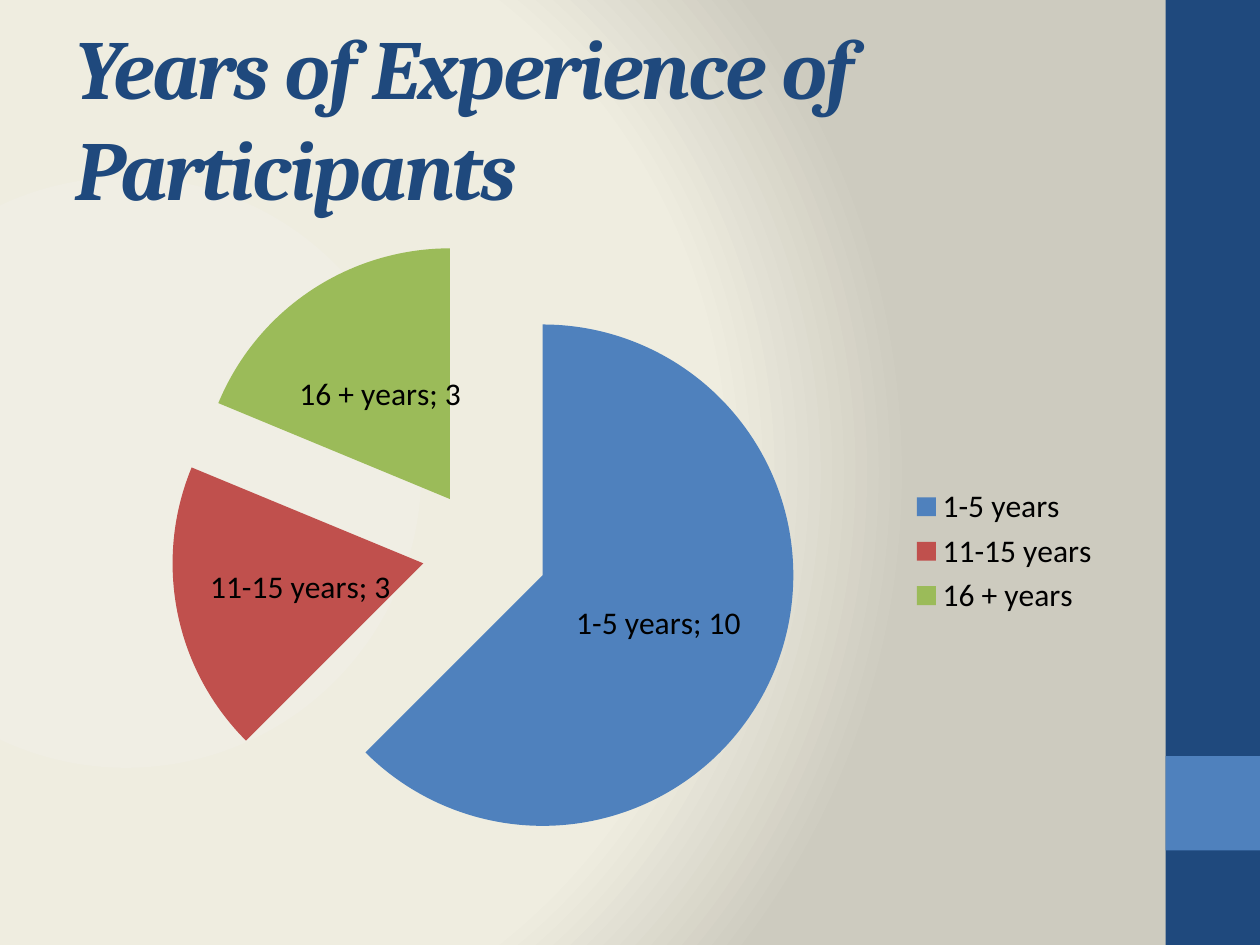
from dataclasses import dataclass

from pptx import Presentation, util as u
from pptx.chart.data import CategoryChartData
from pptx.dml.color import RGBColor
from pptx.enum import chart as ch, shapes, text
from pptx.oxml import parse_xml
from pptx.oxml.ns import nsdecls, qn

NAVY, BLUE = "1F497D", "4F81BD"


@dataclass
class Band:
    top: float
    height: float
    color: str


@dataclass
class Slice:
    label: str
    count: int
    color: str


BANDS = [Band(0, 7.5, NAVY), Band(6, 0.75, BLUE)]
SLICES = [
    Slice("1-5 years", 10, BLUE),
    Slice("11-15 years", 3, "C0504D"),
    Slice("16 + years", 3, "9BBB59"),
]
STOPS = [(0, "F0EEE4"), (75, "EFEDE0"), (100, "CDCBBF")]


def rgb(value: str) -> RGBColor:
    return RGBColor.from_string(value)


def set_background(s) -> None:
    s.background.fill.solid()
    stops = "".join(
        f'<a:gs pos="{pos * 1000}"><a:srgbClr val="{color}"/></a:gs>'
        for pos, color in STOPS
    )
    grad = parse_xml(
        f'<a:gradFill {nsdecls("a")} rotWithShape="1"><a:gsLst>{stops}</a:gsLst>'
        '<a:path path="circle">'
        '<a:fillToRect l="20000" t="50000" r="100000" b="50000"/>'
        "</a:path></a:gradFill>"
    )
    solid = next(s.element.iter(qn("a:solidFill")))
    solid.getparent().replace(solid, grad)


def add_band(s, band: Band) -> None:
    sp = s.shapes.add_shape(
        shapes.MSO_SHAPE.RECTANGLE,
        u.Inches(9.25), u.Inches(band.top), u.Inches(0.75), u.Inches(band.height),
    )
    sp.shadow.inherit = False
    sp.fill.solid()
    sp.fill.fore_color.rgb = rgb(band.color)
    sp.line.fill.background()


def add_text(s, content: str, *, left: float, top: float, width: float,
             height: float, size: float, font: str, color: str,
             bold: bool = False, italic: bool = False, spacing: float = 0) -> None:
    sp = s.shapes.add_textbox(
        u.Inches(left), u.Inches(top), u.Inches(width), u.Inches(height)
    )
    tf = sp.text_frame
    tf.word_wrap = True
    tf.vertical_anchor = text.MSO_ANCHOR.MIDDLE
    r = tf.paragraphs[0].add_run()
    r.text = content
    r.font.size, r.font.name = u.Pt(size), font
    r.font.bold, r.font.italic = bold, italic
    r.font.color.rgb = rgb(color)
    r.font._element.set("spc", str(round(spacing * 100)))


def add_pie(s, slices: list[Slice]) -> None:
    data = CategoryChartData()
    data.categories = [item.label for item in slices]
    data.add_series("Series 1", [item.count for item in slices])
    chart = s.shapes.add_chart(
        ch.XL_CHART_TYPE.PIE,
        u.Inches(0.5), u.Inches(1.75), u.Inches(8.33), u.Inches(5.25), data,
    ).chart
    chart.has_title = False
    chart.font.size, chart.font.name = u.Pt(18), "Calibri"
    chart.font.color.rgb = rgb("000000")
    chart.has_legend = True
    chart.legend.position = ch.XL_LEGEND_POSITION.RIGHT
    chart.legend.include_in_layout = False

    plot = chart.plots[0]
    plot.vary_by_categories = True
    series = plot.series[0]
    for i, item in enumerate(slices):
        fill = series.points[i].format.fill
        fill.solid()
        fill.fore_color.rgb = rgb(item.color)
    first_point = series._element.find(qn("c:dPt"))
    first_point.addprevious(parse_xml(f'<c:explosion {nsdecls("c")} val="25"/>'))

    labels = series.data_labels
    labels.show_value = True
    labels.show_category_name = True
    labels.position = ch.XL_LABEL_POSITION.CENTER


def main() -> None:
    prs = Presentation()
    prs.slide_width, prs.slide_height = u.Inches(10), u.Inches(7.5)
    s = prs.slides.add_slide(prs.slide_layouts[6])
    set_background(s)
    for band in BANDS:
        add_band(s, band)
    add_text(s, "Years of Experience of Participants", left=0.5, top=0.3,
             width=8.33, height=1.25, size=48, font="Cambria", color=NAVY,
             bold=True, italic=True, spacing=-1)
    add_pie(s, SLICES)
    prs.save("out.pptx")


if __name__ == "__main__":
    main()
